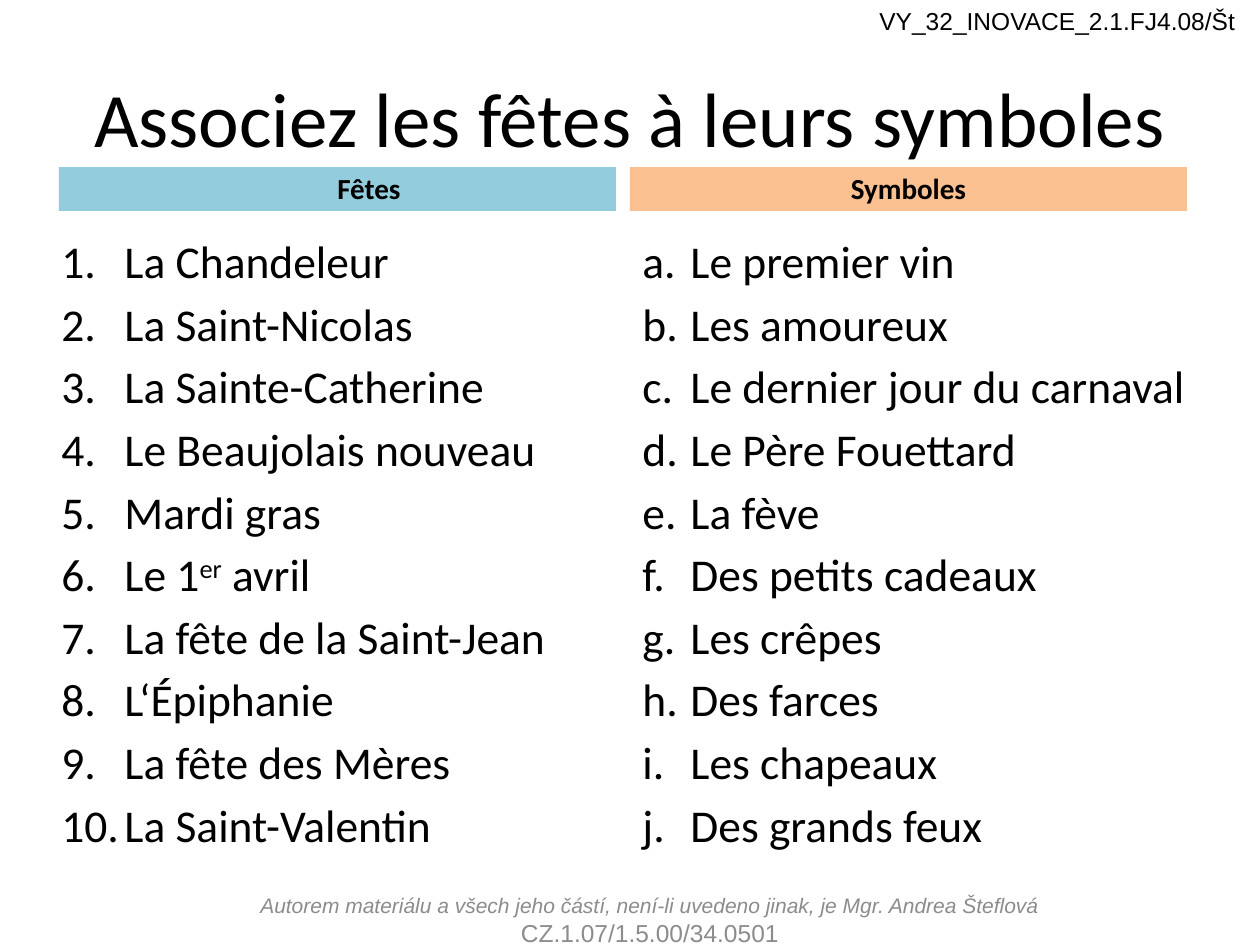
from dataclasses import dataclass

from lxml import etree
from pptx import Presentation
from pptx import util as u
from pptx.dml.color import RGBColor
from pptx.enum import shapes, text
from pptx.oxml import ns

PX = 914400 / 126  # EMU in one px


@dataclass(frozen=True)
class Theme:
    black: str = "000000"
    grey: str = "8C8C8C"
    blue: str = "93CDDD"
    orange: str = "FAC090"
    body_font: str = "Calibri"
    note_font: str = "Arial"
    title_size: float = 44
    heading_size: float = 16.6
    list_size: float = 26
    note_size: float = 14
    credit_size: float = 12


theme = Theme()


def px(length):
    return u.Emu(round(length * PX))


def add_run(paragraph, words, size, font=theme.body_font, color=theme.black,
            bold=False, italic=False):
    run = paragraph.add_run()
    run.text = words
    run.font.size = u.Pt(size)
    run.font.name = font
    run.font.color.rgb = RGBColor.from_string(color)
    run.font.bold = bold
    run.font.italic = italic
    return run


presentation = Presentation()
presentation.slide_width, presentation.slide_height = px(1260), px(945)
slide = presentation.slides.add_slide(presentation.slide_layouts[5])

# Title
title = slide.shapes.title
title.left, title.top, title.width, title.height = px(63), px(38), px(1134), px(158)
title.text_frame.vertical_anchor = text.MSO_ANCHOR.MIDDLE
paragraph = title.text_frame.paragraphs[0]
paragraph.alignment = text.PP_ALIGN.CENTER
add_run(paragraph, "Associez les fêtes à leurs symboles", theme.title_size)

# Two columns: a coloured heading above a numbered list.
# An item is a list of runs; every second run is superscript.
columns = [
    dict(heading="Fêtes", fill=theme.blue, heading_left=59, heading_margin=100,
         heading_indent=-37, list_left=49, hanging=63, numbering="arabicPeriod",
         items=[["La Chandeleur"], ["La Saint-Nicolas"], ["La Sainte-Catherine"],
                ["Le Beaujolais nouveau"], ["Mardi gras"], ["Le 1", "er", " avril"],
                ["La fête de la Saint-Jean"], ["L‘Épiphanie"],
                ["La fête des Mères"], ["La Saint-Valentin"]]),
    dict(heading="Symboles", fill=theme.orange, heading_left=630, heading_margin=0,
         heading_indent=0, list_left=630, hanging=48, numbering="alphaLcPeriod",
         items=[["Le premier vin"], ["Les amoureux"], ["Le dernier jour du carnaval"],
                ["Le Père Fouettard"], ["La fève"], ["Des petits cadeaux"],
                ["Les crêpes"], ["Des farces"], ["Les chapeaux"],
                ["Des grands feux"]]),
]

for column in columns:
    heading = slide.shapes.add_shape(
        shapes.MSO_SHAPE.RECTANGLE, px(column["heading_left"]), px(167), px(557), px(44))
    heading.shadow.inherit = False
    heading.fill.solid()
    heading.fill.fore_color.rgb = RGBColor.from_string(column["fill"])
    heading.line.fill.background()
    heading.text_frame.vertical_anchor = text.MSO_ANCHOR.BOTTOM
    paragraph = heading.text_frame.paragraphs[0]
    paragraph.alignment = text.PP_ALIGN.CENTER
    properties = paragraph._p.get_or_add_pPr()
    properties.set("marL", str(px(column["heading_margin"])))
    properties.set("indent", str(px(column["heading_indent"])))
    add_run(paragraph, column["heading"], theme.heading_size, bold=True)

    item_box = slide.shapes.add_textbox(
        px(column["list_left"]), px(227), px(571), px(659))
    frame = item_box.text_frame
    frame.word_wrap = True
    for index, item in enumerate(column["items"]):
        paragraph = frame.add_paragraph() if index else frame.paragraphs[0]
        paragraph.space_before = u.Pt(4.6)
        properties = paragraph._p.get_or_add_pPr()
        properties.set("marL", str(px(column["hanging"])))
        properties.set("indent", str(-px(column["hanging"])))
        bullet_font = etree.SubElement(properties, ns.qn("a:buFont"))
        bullet_font.set("typeface", "+mj-lt")
        bullet = etree.SubElement(properties, ns.qn("a:buAutoNum"))
        bullet.set("type", column["numbering"])
        for position, words in enumerate(item):
            run = add_run(paragraph, words, theme.list_size)
            if position % 2:
                run._r.get_or_add_rPr().set("baseline", "30000")

# Credit at the foot
credit = slide.shapes.add_textbox(px(246), px(895), px(808), px(50))
frame = credit.text_frame
frame.word_wrap = True
frame.vertical_anchor = text.MSO_ANCHOR.MIDDLE
paragraph = frame.paragraphs[0]
paragraph.alignment = text.PP_ALIGN.CENTER
add_run(paragraph,
        "Autorem materiálu a všech jeho částí, není-li uvedeno jinak, je Mgr. Andrea Šteflová",
        theme.credit_size, theme.note_font, theme.grey, italic=True)
paragraph = frame.add_paragraph()
paragraph.alignment = text.PP_ALIGN.CENTER
add_run(paragraph, "CZ.1.07/1.5.00/34.0501", theme.note_size, theme.note_font, theme.grey)

# Document code in the top corner
code = slide.shapes.add_textbox(px(867), px(0), px(393), px(43))
code.text_frame.word_wrap = True
code.text_frame.auto_size = text.MSO_AUTO_SIZE.SHAPE_TO_FIT_TEXT
add_run(code.text_frame.paragraphs[0], "VY_32_INOVACE_2.1.FJ4.08/Št",
        theme.note_size, theme.note_font)

presentation.save("out.pptx")
